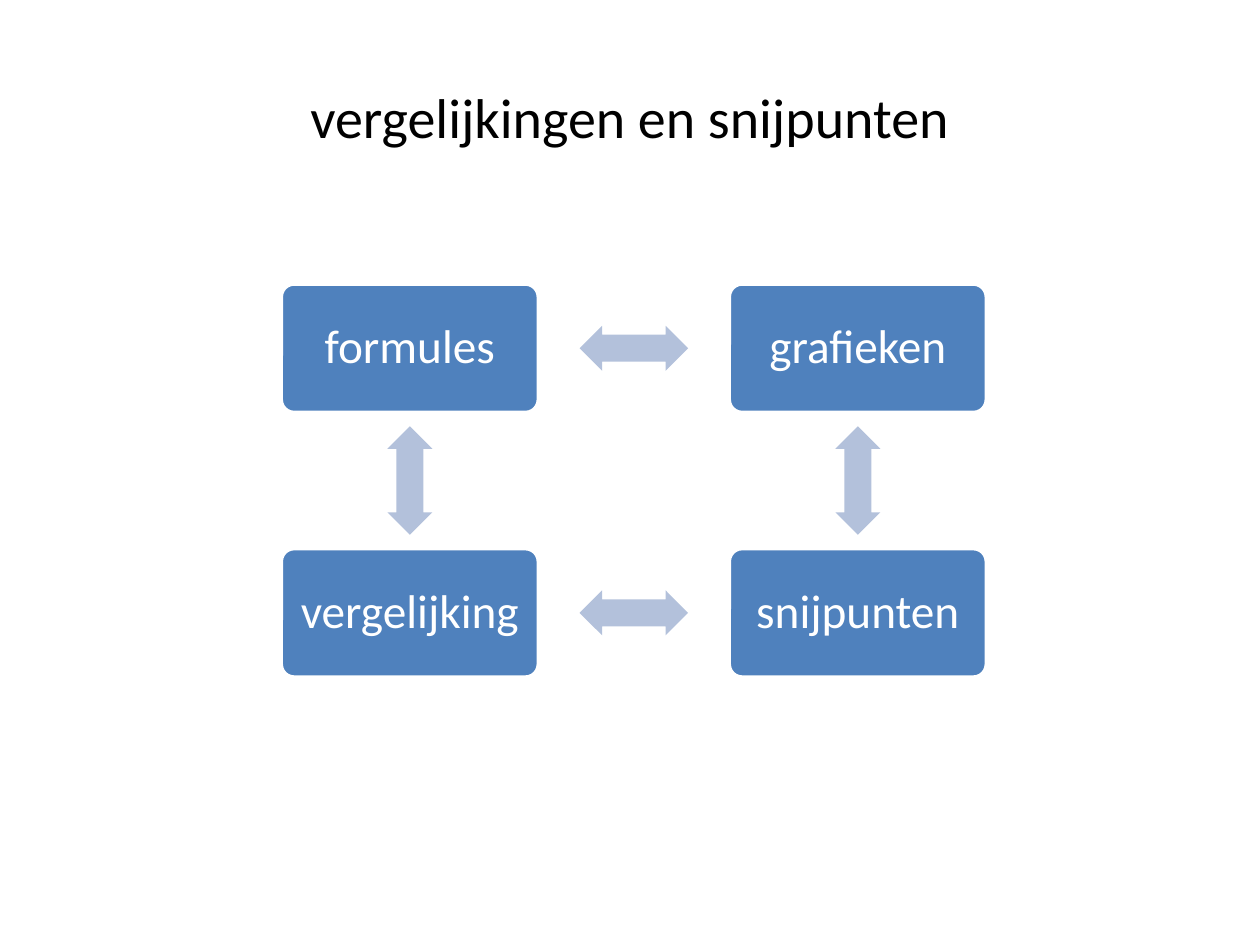
from dataclasses import dataclass

from pptx import Presentation
from pptx.dml.color import RGBColor
from pptx.enum import shapes, text
from pptx.util import Pt


@dataclass(frozen=True)
class Theme:
    font: str = "Calibri"
    title_size: float = 32
    box_size: float = 27
    title_color: str = "000000"
    box_color: str = "4F81BD"
    light: str = "FFFFFF"
    arrow_color: str = "B3C1DB"


class SlideBuilder:
    """Draws styled elements on one slide; all lengths are in points."""

    def __init__(self, slide, theme):
        self.slide = slide
        self.theme = theme

    def label(self, sp, content, size, color, inset):
        tf = sp.text_frame
        tf.text = content
        tf.word_wrap = True
        tf.vertical_anchor = text.MSO_ANCHOR.MIDDLE
        tf.margin_left = tf.margin_right = Pt(inset)
        tf.margin_top = tf.margin_bottom = Pt(inset)
        p = tf.paragraphs[0]
        p.alignment = text.PP_ALIGN.CENTER
        font = p.runs[0].font
        font.name = self.theme.font
        font.size = Pt(size)
        font.color.rgb = RGBColor.from_string(color)
        return p

    def title(self, content, left, top, width, height):
        sp = self.slide.shapes.add_textbox(Pt(left), Pt(top), Pt(width), Pt(height))
        self.label(sp, content, self.theme.title_size, self.theme.title_color, 7.2)

    def shape(self, kind, center, size, color, adjustments):
        (x, y), (w, h) = center, size
        sp = self.slide.shapes.add_shape(
            kind, Pt(x - w / 2), Pt(y - h / 2), Pt(w), Pt(h))
        for i, value in enumerate(adjustments):
            sp.adjustments[i] = value
        sp.shadow.inherit = False
        sp.fill.solid()
        sp.fill.fore_color.rgb = RGBColor.from_string(color)
        sp.line.fill.background()
        return sp

    def box(self, content, center, size):
        sp = self.shape(shapes.MSO_SHAPE.ROUNDED_RECTANGLE, center, size,
                        self.theme.box_color, [0.1])
        sp.line.color.rgb = RGBColor.from_string(self.theme.light)
        sp.line.width = Pt(2)
        p = self.label(sp, content, self.theme.box_size, self.theme.light, 7.9)
        p.line_spacing = 0.9

    def arrow(self, center, size, rotation):
        sp = self.shape(shapes.MSO_SHAPE.LEFT_RIGHT_ARROW, center, size,
                        self.theme.arrow_color, [0.6, 0.5])
        sp.rotation = rotation


def main():
    prs = Presentation()
    prs.slide_width, prs.slide_height = Pt(720), Pt(540)
    s = SlideBuilder(prs.slides.add_slide(prs.slide_layouts[6]), Theme())

    # Title
    s.title("vergelijkingen en snijpunten", 36, 21.6, 648, 90)

    # Cycle: boxes clockwise from top left, each followed by an arrow to the next
    left, right, top, bottom = 234.2, 490.2, 199, 350.2
    corners = [(left, top), (right, top), (right, bottom), (left, bottom)]
    names = ["formules", "grafieken", "snijpunten", "vergelijking"]
    for i, (name, here) in enumerate(zip(names, corners)):
        following = corners[(i + 1) % len(corners)]
        middle = [(a + b) / 2 for a, b in zip(here, following)]
        s.box(name, here, (146.9, 73.4))
        s.arrow(middle, (62, 25.7), 90 * i)

    prs.save("out.pptx")


if __name__ == "__main__":
    main()
